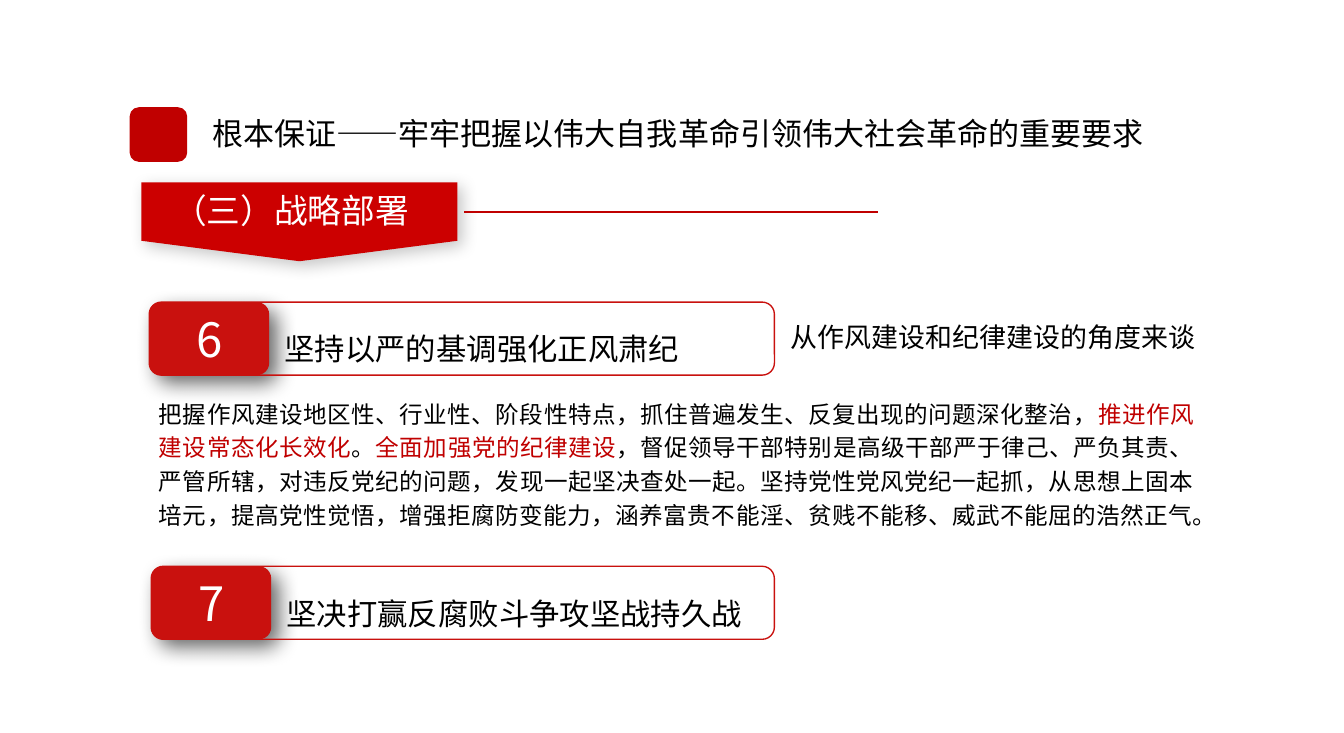
from dataclasses import dataclass

import pptx
import pptx.dml.color
import pptx.enum.shapes
import pptx.enum.text
import pptx.oxml
import pptx.oxml.ns
import pptx.util

Align = pptx.enum.text.PP_ALIGN
Anchor = pptx.enum.text.MSO_ANCHOR
Preset = pptx.enum.shapes.MSO_SHAPE

WIDTH, HEIGHT = pptx.util.Inches(13.78), pptx.util.Inches(7.52)


@dataclass(frozen=True)
class Theme:
    font: str = "Noto Sans CJK SC"
    ink: str = "000000"
    paper: str = "FFFFFF"
    accent: str = "C00000"
    banner: str = "CC0000"
    badge: str = "C9110E"
    title_size: float = 22.9
    banner_size: float = 24.9
    badge_size: float = 34.9
    heading_size: float = 22.4
    remark_size: float = 19.9
    body_size: float = 17.4


@dataclass(frozen=True)
class Area:
    """A place on a grid of 100 columns by 100 rows."""
    left: float
    top: float
    width: float
    height: float

    def box(self) -> tuple[int, int, int, int]:
        return col(self.left), row(self.top), col(self.width), row(self.height)


@dataclass(frozen=True)
class Shadow:
    opacity: int
    blur: int
    distance: int


@dataclass(frozen=True)
class Measure:
    number: str
    heading: str
    left: float
    top: float


THEME = Theme()
BANNER_SHADOW = Shadow(opacity=21, blur=12, distance=5)
BADGE_SHADOW = Shadow(opacity=60, blur=16, distance=8)
FRAME_RIGHT = 57.62
ROW_HEIGHT = 9.97

MEASURES = [
    Measure("6", "坚持以严的基调强化正风肃纪", 11.1, 41.22),
    Measure("7", "坚决打赢反腐败斗争攻坚战持久战", 11.25, 77.26),
]
DETAILS = [
    ("把握作风建设地区性、行业性、阶段性特点，抓住普遍发生、反复出现的问题深化整治，", THEME.ink),
    ("推进作风建设常态化长效化", THEME.accent),
    ("。", THEME.ink),
    ("全面加强党的纪律建设", THEME.accent),
    ("，督促领导干部特别是高级干部严于律己、严负其责、严管所辖，对违反党纪的问题，"
     "发现一起坚决查处一起。坚持党性党风党纪一起抓，从思想上固本培元，提高党性觉悟，"
     "增强拒腐防变能力，涵养富贵不能淫、贫贱不能移、威武不能屈的浩然正气。", THEME.ink),
]


def col(columns: float) -> int:
    return round(WIDTH * columns / 100)


def row(rows: float) -> int:
    return round(HEIGHT * rows / 100)


def rgb(color: str) -> pptx.dml.color.RGBColor:
    return pptx.dml.color.RGBColor.from_string(color)


def write(shape, text: str | list[tuple[str, str]], *, size: float, color: str = THEME.ink,
          align: Align = Align.LEFT, anchor: Anchor = Anchor.TOP, spacing: float = 1.0,
          grow: bool = True) -> None:
    """Fill a shape with one paragraph, given as plain text or as (text, colour) pairs."""
    frame = shape.text_frame
    frame.word_wrap = True
    fit = pptx.enum.text.MSO_AUTO_SIZE
    frame.auto_size = fit.SHAPE_TO_FIT_TEXT if grow else fit.NONE
    frame.vertical_anchor = anchor
    paragraph = frame.paragraphs[0]
    paragraph.alignment = align
    paragraph.line_spacing = spacing
    for words, tint in [(text, color)] if isinstance(text, str) else text:
        run = paragraph.add_run()
        run.text = words
        run.font.size = pptx.util.Pt(size)
        run.font.name = THEME.font
        run.font.color.rgb = rgb(tint)
        east_asian = pptx.oxml.parse_xml(
            f'<a:ea {pptx.oxml.ns.nsdecls("a")} typeface="{THEME.font}"/>')
        run.font._element.find(pptx.oxml.ns.qn("a:latin")).addnext(east_asian)


def place(shape, area: Area):
    shape.left, shape.top, shape.width, shape.height = area.box()
    return shape


def text_box(slide, area: Area):
    return slide.shapes.add_textbox(*area.box())


def paint(shape, fill: str | None = None, line: str | None = None,
          shadow: Shadow | None = None) -> None:
    shape.shadow.inherit = False
    if fill:
        shape.fill.solid()
        shape.fill.fore_color.rgb = rgb(fill)
    else:
        shape.fill.background()
    if line:
        shape.line.color.rgb = rgb(line)
        shape.line.width = pptx.util.Pt(1)
    else:
        shape.line.fill.background()
    if shadow:
        effects = shape._element.spPr.find(pptx.oxml.ns.qn("a:effectLst"))
        effects.append(pptx.oxml.parse_xml(
            f'<a:outerShdw {pptx.oxml.ns.nsdecls("a")} blurRad="{pptx.util.Pt(shadow.blur)}" '
            f'dist="{pptx.util.Pt(shadow.distance)}" dir="2700000" algn="tl" rotWithShape="0">'
            f'<a:srgbClr val="{THEME.ink}"><a:alpha val="{shadow.opacity * 1000}"/></a:srgbClr>'
            '</a:outerShdw>'))


def rounded(slide, area: Area, **style):
    shape = slide.shapes.add_shape(Preset.ROUNDED_RECTANGLE, *area.box())
    paint(shape, **style)
    return shape


def draw_title(slide) -> None:
    rounded(slide, Area(9.65, 14.63, 4.28, 7.45), fill=THEME.accent)
    write(place(slide.shapes.title, Area(15.09, 14.89, 75.83, 6.52)),
          "根本保证——牢牢把握以伟大自我革命引领伟大社会革命的重要要求", size=THEME.title_size)


def draw_banner(slide) -> None:
    left, middle, right = 10.52, 22.28, 34.03
    top, shoulder, tip = 24.87, 32.85, 35.64
    outline = slide.shapes.build_freeform(col(left), row(top))
    outline.add_line_segments([(col(x), row(y)) for x, y in (
        (right, top), (right, shoulder), (middle, tip), (left, shoulder))])
    paint(outline.convert_to_shape(), fill=THEME.banner, shadow=BANNER_SHADOW)
    write(text_box(slide, Area(left, 25.27, 22.28, 6.91)), "（三）战略部署",
          size=THEME.banner_size, color=THEME.paper, align=Align.CENTER)

    rule = slide.shapes.add_connector(pptx.enum.shapes.MSO_CONNECTOR.STRAIGHT,
                                      col(34.54), row(28.86), col(65.31), row(28.86))
    rule.line.color.rgb = rgb(THEME.accent)
    rule.line.width = pptx.util.Pt(1.5)
    rule._element.spPr.append(
        pptx.oxml.parse_xml(f'<a:effectLst {pptx.oxml.ns.nsdecls("a")}/>'))


def draw_measure(slide, measure: Measure) -> None:
    left, top = measure.left, measure.top
    badge = rounded(slide, Area(left, top, 8.93, ROW_HEIGHT),
                    fill=THEME.badge, shadow=BADGE_SHADOW)
    write(badge, measure.number, size=THEME.badge_size, color=THEME.paper,
          align=Align.CENTER, anchor=Anchor.MIDDLE, grow=False)
    rounded(slide, Area(left, top, FRAME_RIGHT - left, ROW_HEIGHT), line=THEME.badge)
    write(text_box(slide, Area(left + 9.36, top + 0.75, 44.85, 7.6)), measure.heading,
          size=THEME.heading_size, spacing=1.5)


def draw_details(slide) -> None:
    details = place(slide.placeholders[1], Area(11.1, 53.06, 78.45, 24.2))
    properties = details.text_frame.paragraphs[0]._p.get_or_add_pPr()
    properties.set("marL", "0")
    properties.set("indent", "0")
    properties.append(pptx.oxml.parse_xml(f'<a:buNone {pptx.oxml.ns.nsdecls("a")}/>'))
    details.text_frame.paragraphs[0].space_before = pptx.util.Pt(0)
    write(details, DETAILS, size=THEME.body_size, align=Align.JUSTIFY, spacing=1.2)


def main() -> None:
    deck = pptx.Presentation()
    deck.slide_width, deck.slide_height = WIDTH, HEIGHT
    slide = deck.slides.add_slide(deck.slide_layouts[1])
    draw_title(slide)
    draw_banner(slide)
    for measure in MEASURES:
        draw_measure(slide, measure)
    write(text_box(slide, Area(58.13, 43.09, 36.5, 5.72)), "从作风建设和纪律建设的角度来谈",
          size=THEME.remark_size)
    draw_details(slide)
    deck.save("out.pptx")


if __name__ == "__main__":
    main()
